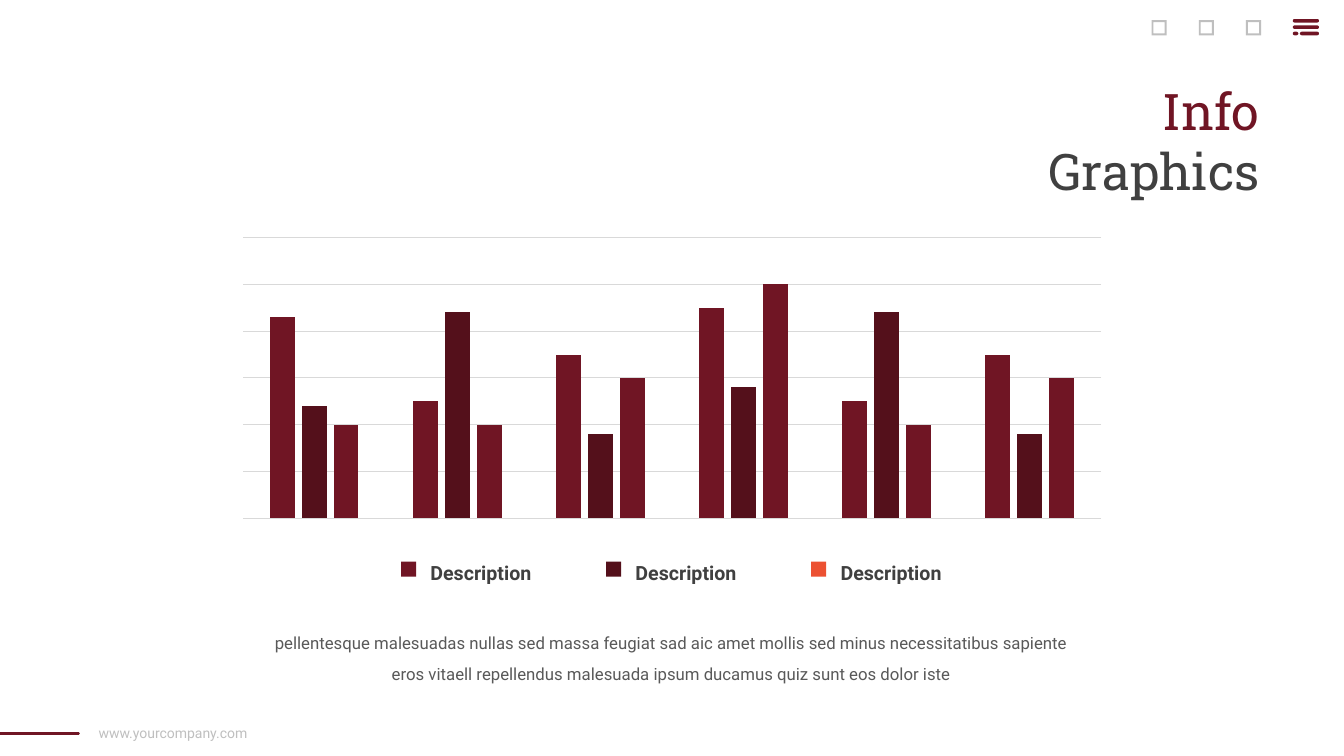
import pptx
import pptx.chart.data
import pptx.dml.color
import pptx.enum.chart
import pptx.enum.shapes
import pptx.enum.text
import pptx.oxml
import pptx.oxml.ns
import pptx.util

Cm = pptx.util.Cm
Pt = pptx.util.Pt
SHAPE = pptx.enum.shapes.MSO_SHAPE
ALIGN = pptx.enum.text.PP_ALIGN
COLORS = {
    "wine": "701524", "dark": "54101B", "orange": "EC5132", "heading": "404040",
    "body": "595959", "muted": "BFBFBF", "grid": "D9D9D9", "black": "000000",
}


def rgb(name):
    return pptx.dml.color.RGBColor.from_string(COLORS[name])


def add_text(box, lines, font, align=ALIGN.LEFT, spacing=1.0, wrap=False):
    tf = slide.shapes.add_textbox(*[Cm(v) for v in box]).text_frame
    frame = {"margin_left": 0, "margin_top": 0, "margin_right": 0, "margin_bottom": 0,
             "word_wrap": wrap, "auto_size": pptx.enum.text.MSO_AUTO_SIZE.SHAPE_TO_FIT_TEXT}
    for key, value in frame.items():
        setattr(tf, key, value)
    for i, (text, color) in enumerate(lines):
        p = tf.add_paragraph() if i else tf.paragraphs[0]
        p.alignment = align
        p.line_spacing = spacing
        r = p.add_run()
        r.text = text
        r.font.color.rgb = rgb(color)
        for key, value in font.items():
            setattr(r.font, key, value)


prs = pptx.Presentation()
prs.slide_width, prs.slide_height = Cm(33.88), Cm(19.05)
slide = prs.slides.add_slide(prs.slide_layouts[6])

data = pptx.chart.data.CategoryChartData()
data.categories = ["1", "2", "3", "4", "5", "6"]
series = [
    ("Series 1", (86, 50, 70, 90, 50, 70), "wine"),
    ("Series 2", (48, 88, 36, 56, 88, 36), "dark"),
    ("Series 3", (40, 40, 60, 100, 40, 60), "wine"),
]
for name, values, color in series:
    data.add_series(name, values)
chart = slide.shapes.add_chart(
    pptx.enum.chart.XL_CHART_TYPE.COLUMN_CLUSTERED,
    Cm(5.67), Cm(5.84), Cm(22.54), Cm(7.37), data).chart
chart.has_legend = False
chart.has_title = False
for key, value in {"name": "Roboto", "size": Pt(10)}.items():
    setattr(chart.font, key, value)
chart.font.color.rgb = rgb("black")
plot = chart.plots[0]
for key, value in {"gap_width": 219, "overlap": -27, "vary_by_categories": False}.items():
    setattr(plot, key, value)
for s, (name, values, color) in zip(plot.series, series):
    s.format.fill.solid()
    s.format.fill.fore_color.rgb = rgb(color)
chart.category_axis.visible = False
axis = chart.value_axis
for key, value in {"visible": False, "minimum_scale": 0, "maximum_scale": 120,
                   "major_unit": 20, "has_major_gridlines": True}.items():
    setattr(axis, key, value)
grid = axis.major_gridlines.format.line
grid.color.rgb = rgb("grid")
grid.width = Pt(0.75)

area = chart._chartSpace.chart.plotArea
for old in area.findall(pptx.oxml.ns.qn("c:layout")):
    area.remove(old)
area.insert(0, pptx.oxml.parse_xml(
    f'<c:layout {pptx.oxml.ns.nsdecls("c")}><c:manualLayout><c:layoutTarget val="inner"/>'
    '<c:xMode val="edge"/><c:yMode val="edge"/><c:x val="0.02"/><c:y val="0.02"/>'
    '<c:w val="0.96"/><c:h val="0.96"/></c:manualLayout></c:layout>'))

shapes = []
for i, color in enumerate(("wine", "dark", "orange")):
    left = 10.11 + 5.17 * i
    shapes.append((SHAPE.RECTANGLE, (left, 14.15, 0.38, 0.38), color))
    add_text((left + 0.74, 13.84, 2.82, 0.81), [("Description", "heading")],
             {"name": "Roboto", "size": Pt(14), "bold": True}, spacing=1.5)

add_text((6.8, 15.7, 20.25, 1.45),
         [("pellentesque malesuadas nullas sed massa feugiat sad aic amet mollis sed minus "
           "necessitatibus sapiente eros vitaell repellendus malesuada ipsum ducamus quiz "
           "sunt eos dolor iste", "body")],
         {"name": "Roboto", "size": Pt(12)}, ALIGN.CENTER, 1.5, True)
add_text((26.21, 2.01, 5.54, 3.07), [("Info", "wine"), ("Graphics", "heading")],
         {"name": "Roboto Slab", "size": Pt(36)}, ALIGN.RIGHT)
add_text((2.39, 18.26, 3.94, 0.43), [("www.yourcompany.com", "muted")],
         {"name": "Roboto", "size": Pt(10)}, ALIGN.CENTER)

rule = slide.shapes.add_connector(
    pptx.enum.shapes.MSO_CONNECTOR.STRAIGHT, 0, Cm(18.49), Cm(1.98), Cm(18.49))
rule.line.color.rgb = rgb("wine")
rule.line.width = Pt(2)
rule.line._get_or_add_ln().set("cap", "rnd")
rule._element.spPr.append(
    pptx.oxml.parse_xml(f'<a:effectLst {pptx.oxml.ns.nsdecls("a")}/>'))

for left, top, width in ((32.59, 0.48, 0.66), (32.59, 0.64, 0.66),
                         (32.59, 0.8, 0.14), (32.77, 0.8, 0.48)):
    shapes.append((SHAPE.ROUNDED_RECTANGLE, (left, top, width, 0.09), "wine"))
for i in range(3):
    shapes.append((SHAPE.FRAME, (29.03 + 1.19 * i, 0.51, 0.38, 0.38), "muted"))

for kind, box, color in shapes:
    sp = slide.shapes.add_shape(kind, *[Cm(v) for v in box])
    sp.shadow.inherit = False
    sp.fill.solid()
    sp.fill.fore_color.rgb = rgb(color)
    sp.line.fill.background()
    if kind == SHAPE.ROUNDED_RECTANGLE:
        sp.adjustments[0] = 0.5

prs.save("out.pptx")
